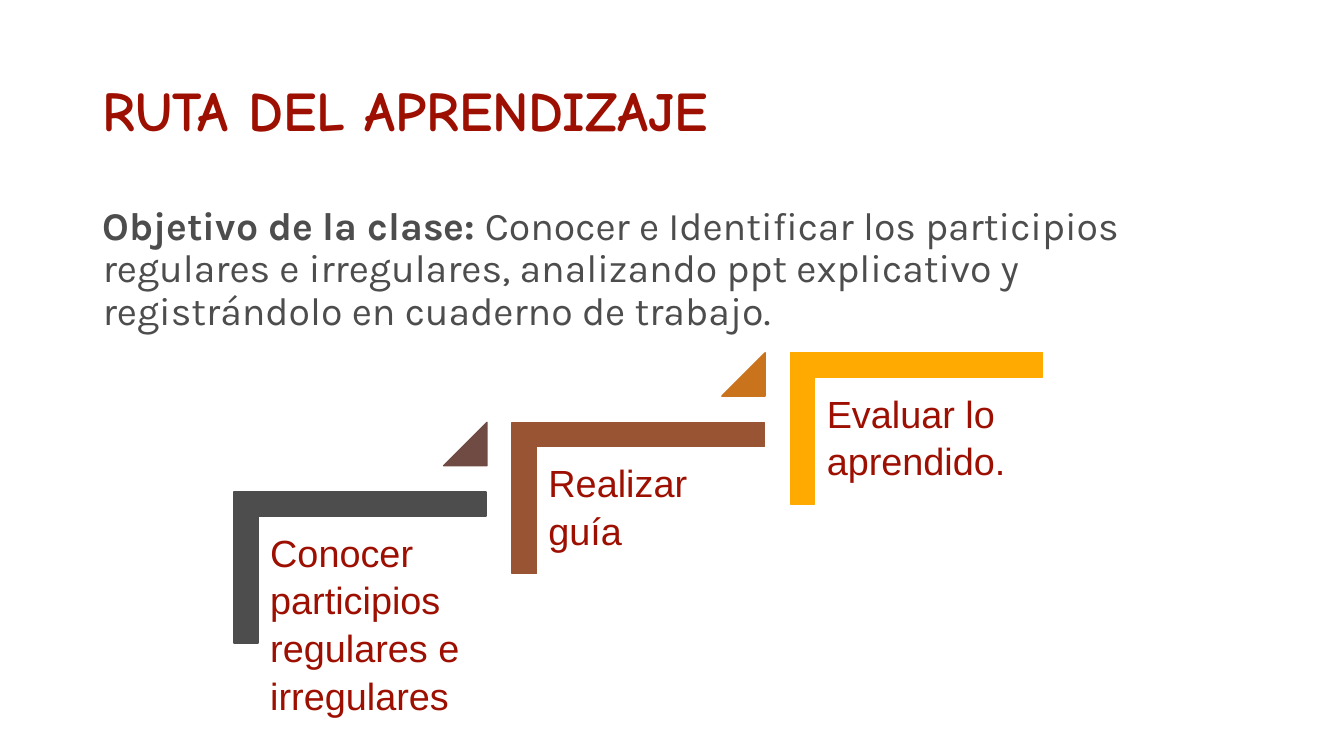
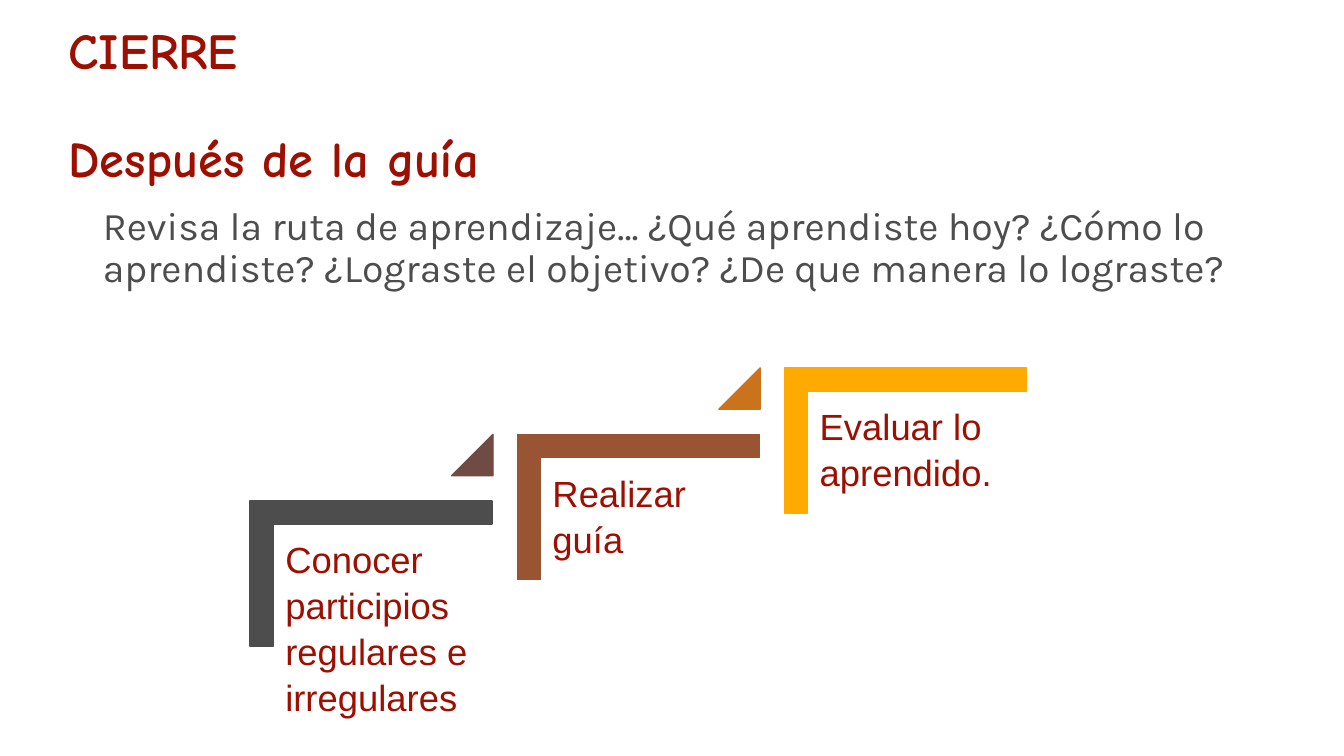
from dataclasses import dataclass

import pptx
import pptx.dml.color
import pptx.enum.shapes
import pptx.enum.text
import pptx.oxml.ns
import pptx.util

MSO = pptx.enum.shapes.MSO_SHAPE
ANCHOR = pptx.enum.text.MSO_ANCHOR
EMU_PER_PX = 9144

COLORS = {
    "title": "9D0F00",
    "body": "4D4D4D",
    "step1": "4D4D4D",
    "arrow1": "704B43",
    "step2": "995533",
    "arrow2": "C9731D",
    "step3": "FFAA00",
}
BODY_FONT = {"name": "Karla", "size": pptx.util.Pt(28)}
STEP_NAMES = [
    "Conocer participios regulares e irregulares",
    "Realizar guía",
    "Evaluar lo aprendido.",
]


@dataclass
class Run:
    text: str
    bold: bool = False


@dataclass
class Staircase:
    left: int
    top: int
    percent: int = 100

    def scaled(self, length: int) -> int:
        return round(length * self.percent / 100)


@dataclass
class Lesson:
    title: list[str]
    title_left: int
    title_top: int
    title_size: int
    body: list[Run]
    stairs: Staircase


LESSONS = [
    Lesson(
        ["RUTA DEL APRENDIZAJE"], 92, 40, 40,
        [
            Run("Objetivo de la clase: ", True),
            Run("Conocer e Identificar los participios regulares e irregulares, "
                "analizando ppt explicativo y registrándolo en cuaderno de trabajo."),
        ],
        Staircase(282, 438),
    ),
    Lesson(
        ["CIERRE", "Después de la guía"], 58, 34, 36,
        [Run("Revisa la ruta de aprendizaje… ¿Qué aprendiste hoy? ¿Cómo lo "
             "aprendiste? ¿Lograste el objetivo? ¿De que manera lo lograste?")],
        Staircase(296, 449, 96),
    ),
]


def px(n: int) -> pptx.util.Emu:
    return pptx.util.Emu(n * EMU_PER_PX)


def rgb(key: str) -> pptx.dml.color.RGBColor:
    return pptx.dml.color.RGBColor.from_string(COLORS[key])


def set_attrs(target, values: dict) -> None:
    for name, value in values.items():
        setattr(target, name, value)


def set_font(font, values: dict, color: str) -> None:
    set_attrs(font, values)
    font.color.rgb = rgb(color)


def place(sp, left: int, top: int, width: int, height: int) -> None:
    set_attrs(sp, {"left": px(left), "top": px(top),
                   "width": px(width), "height": px(height)})


def set_frame(tf, anchor, margins: dict) -> None:
    set_attrs(tf, {"word_wrap": True, "vertical_anchor": anchor,
                   "auto_size": pptx.enum.text.MSO_AUTO_SIZE.NONE, **margins})


def set_paragraph(p, line_spacing: float, space_before: int = 0) -> None:
    set_attrs(p, {"alignment": pptx.enum.text.PP_ALIGN.LEFT,
                  "line_spacing": line_spacing,
                  "space_before": pptx.util.Pt(space_before)})


def fill_title(sp, lesson: Lesson) -> None:
    place(sp, lesson.title_left, lesson.title_top, 1150, 145)
    tf = sp.text_frame
    set_frame(tf, ANCHOR.MIDDLE, {})
    font = {"name": "Comic Neue", "size": pptx.util.Pt(lesson.title_size), "bold": True}
    for i, line in enumerate(lesson.title):
        p = tf.add_paragraph() if i else tf.paragraphs[0]
        set_paragraph(p, 0.9, 38 if i else 0)
        r = p.add_run()
        r.text = line
        set_font(r.font, font, "title")


def fill_body(sp, runs: list[Run]) -> None:
    place(sp, 92, 200, 1150, 476)
    tf = sp.text_frame
    set_frame(tf, ANCHOR.TOP, {})
    p = tf.paragraphs[0]
    set_paragraph(p, 0.9)
    pPr = p._p.get_or_add_pPr()
    pPr.set("marL", "0")
    pPr.set("indent", "0")
    pPr.append(pptx.oxml.parse_xml(f"<a:buNone {pptx.oxml.ns.nsdecls('a')}/>"))
    for run in runs:
        r = p.add_run()
        r.text = run.text
        set_font(r.font, {**BODY_FONT, "bold": run.bold}, "body")


def add_solid(shapes, kind, box: tuple[int, int, int, int],
              color: str, adjustments: list[float]):
    sp = shapes.add_shape(kind, *map(px, box))
    sp.shadow.inherit = False
    sp.fill.solid()
    sp.fill.fore_color.rgb = rgb(color)
    sp.line.color.rgb = rgb(color)
    sp.line.width = pptx.util.Pt(1)
    for i, value in enumerate(adjustments):
        sp.adjustments[i] = value
    return sp


def add_step_label(shapes, box: tuple[int, int, int, int], text: str, size: int) -> None:
    tf = shapes.add_textbox(*map(px, box)).text_frame
    sides = ("left", "top", "right", "bottom")
    set_frame(tf, ANCHOR.TOP, {f"margin_{side}": px(11) for side in sides})
    p = tf.paragraphs[0]
    set_paragraph(p, 1.05)
    r = p.add_run()
    r.text = text
    set_font(r.font, {"name": "Arial", "size": pptx.util.Pt(size)}, "title")


def add_stairs(s, stairs: Staircase) -> None:
    shapes = s.shapes.add_group_shape().shapes
    k = stairs.scaled
    for i, name in enumerate(STEP_NAMES):
        left = stairs.left + i * k(276)
        top = stairs.top - i * k(69)
        corner = add_solid(shapes, MSO.CORNER, (left, top, k(150), k(250)),
                           f"step{i + 1}", [0.16, 0.16])
        corner.rotation = 90
        add_step_label(shapes, (left - k(25), top + k(74), k(225), k(198)), name, k(27))
        if i < len(STEP_NAMES) - 1:
            add_solid(shapes, MSO.ISOSCELES_TRIANGLE,
                      (left + k(158), top - k(19), k(43), k(43)),
                      f"arrow{i + 1}", [1])


def main() -> None:
    prs = pptx.Presentation()
    prs.slide_width, prs.slide_height = px(1333), px(750)
    for lesson in LESSONS:
        s = prs.slides.add_slide(prs.slide_layouts[1])
        fill_title(s.shapes.title, lesson)
        fill_body(s.placeholders[1], lesson.body)
        add_stairs(s, lesson.stairs)
    prs.save("out.pptx")


if __name__ == "__main__":
    main()
